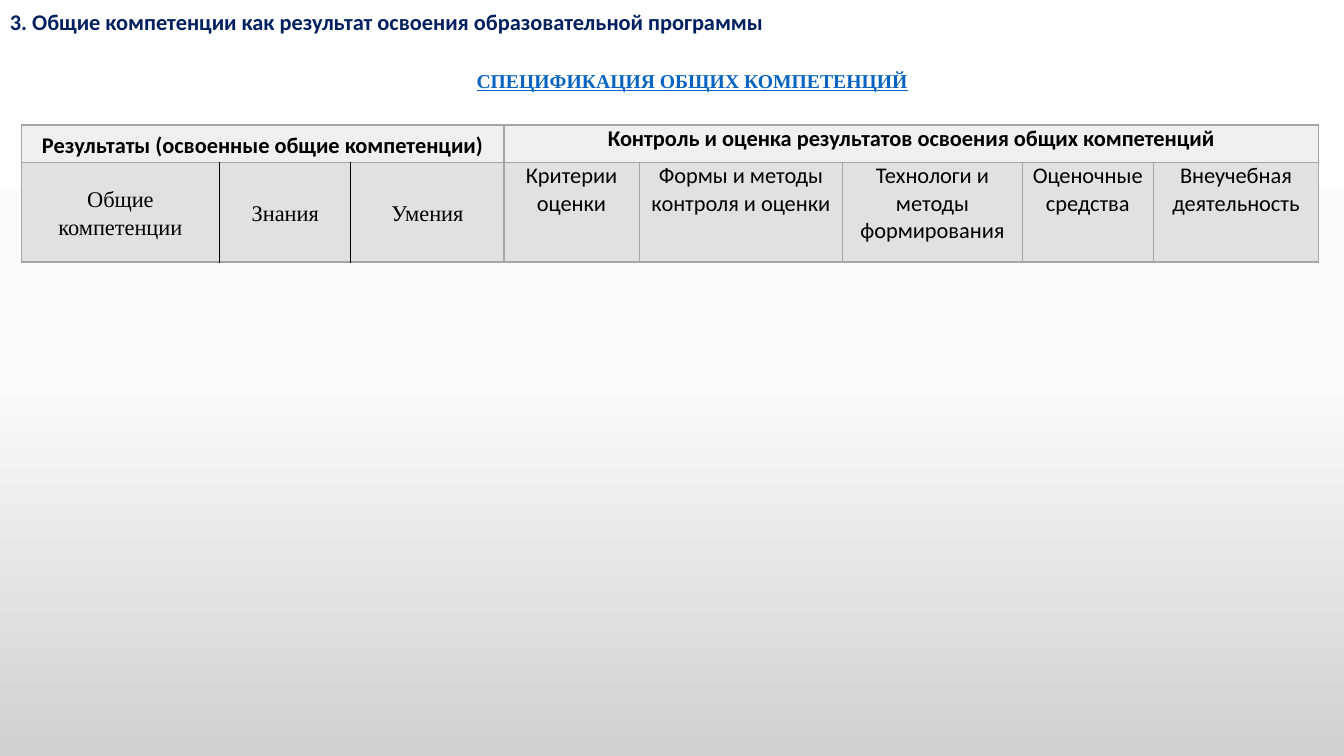
from lxml import etree
from pptx import Presentation
from pptx import util as u
from pptx.dml.color import RGBColor
from pptx.enum import text
from pptx.oxml import ns, parse_xml

TITLE = "3. Общие компетенции как результат освоения образовательной программы"
SUBTITLE = "СПЕЦИФИКАЦИЯ ОБЩИХ КОМПЕТЕНЦИЙ"
GROUPS = [
    ("Результаты (освоенные общие компетенции)",
     [("Общие компетенции", 1.97), ("Знания", 1.3), ("Умения", 1.52)]),
    ("Контроль и оценка результатов освоения общих компетенций",
     [("Критерии оценки", 1.34), ("Формы и методы контроля и оценки", 2.02),
      ("Технологи и методы формирования", 1.78), ("Оценочные средства", 1.3),
      ("Внеучебная деятельность", 1.64)]),
]
ROW_HEIGHTS = [0.37, 0.99]
THEME = {
    "sans": "Calibri", "serif": "Times New Roman",
    "body_size": 16, "subtitle_size": 14,
    "title": "002060", "link": "0563C1", "ink": "000000",
    "group_fill": "F0F0F0", "column_fill": "E1E1E1", "border": "A5A5A5",
    "background": [(0, "FFFFFF"), (50, "FBFBFB"), (100, "D1D1D1")],
}


def style(para, font, size, color, bold=False, underline=None):
    para.font.name = font
    para.font.size = u.Pt(size)
    para.font.color.rgb = RGBColor.from_string(color)
    para.font.bold = bold
    para.font.underline = underline


def paint_background(page):
    fill = page.background.fill
    fill.gradient()
    fill.gradient_angle = 270
    stops = fill._fill._gradFill.find(ns.qn("a:gsLst"))
    for stop in list(stops):
        stops.remove(stop)
    for percent, color in THEME["background"]:
        stop = etree.SubElement(stops, ns.qn("a:gs"), pos=str(percent * 1000))
        etree.SubElement(stop, ns.qn("a:srgbClr"), val=color)


def add_text(page, words, left, top, width, height, wrap):
    box = page.shapes.add_textbox(*map(u.Inches, (left, top, width, height)))
    frame = box.text_frame
    frame.word_wrap = wrap
    frame.auto_size = text.MSO_AUTO_SIZE.SHAPE_TO_FIT_TEXT
    frame.text = words
    return frame


def set_borders(cell, left, right):
    sides = {"L": left, "R": right, "T": THEME["border"], "B": THEME["border"]}
    properties = cell._tc.get_or_add_tcPr()
    for place, (side, color) in enumerate(sides.items()):
        properties.insert(place, parse_xml(
            f'<a:ln{side} {ns.nsdecls("a")} w="12700"><a:solidFill>'
            f'<a:srgbClr val="{color}"/></a:solidFill></a:ln{side}>'))


def fill_cell(cell, words, fill, font, bold, middle):
    cell.fill.solid()
    cell.fill.fore_color.rgb = RGBColor.from_string(fill)
    cell.margin_left = cell.margin_right = u.Inches(0.07)
    cell.margin_top = cell.margin_bottom = 0
    cell.text = words
    para = cell.text_frame.paragraphs[0]
    para.alignment = text.PP_ALIGN.CENTER
    style(para, font, THEME["body_size"], THEME["ink"], bold)
    if middle:
        cell.vertical_anchor = text.MSO_ANCHOR.MIDDLE
        para.line_spacing = 1.15


def add_competence_table(page):
    widths = [width for _, columns in GROUPS for _, width in columns]
    table = page.shapes.add_table(
        len(ROW_HEIGHTS), len(widths), u.Inches(0.21), u.Inches(1.24),
        u.Inches(sum(widths)), u.Inches(sum(ROW_HEIGHTS))).table
    table.first_row = table.horz_banding = False
    for column, width in zip(table.columns, widths):
        column.width = u.Inches(width)
    for row, height in zip(table.rows, ROW_HEIGHTS):
        row.height = u.Inches(height)

    start = 0
    for group, (heading, columns) in enumerate(GROUPS):
        results = group == 0
        last = len(columns) - 1
        table.cell(0, start).merge(table.cell(0, start + last))
        fill_cell(table.cell(0, start), heading, THEME["group_fill"],
                  THEME["sans"], True, results)
        inner = THEME["ink"] if results else THEME["border"]
        for index, (label, _) in enumerate(columns):
            set_borders(table.cell(0, start + index), THEME["border"], THEME["border"])
            cell = table.cell(1, start + index)
            fill_cell(cell, label, THEME["column_fill"],
                      THEME["serif"] if results else THEME["sans"], False, results)
            set_borders(cell, inner if index > 0 else THEME["border"],
                        inner if index < last else THEME["border"])
        start += len(columns)


def main():
    deck = Presentation()
    deck.slide_width, deck.slide_height = u.Inches(13.33), u.Inches(7.5)
    page = deck.slides.add_slide(deck.slide_layouts[6])
    paint_background(page)

    title = add_text(page, TITLE, 0, 0.03, 13.13, 0.37, True)
    style(title.paragraphs[0], THEME["sans"], THEME["body_size"], THEME["title"], True)

    add_competence_table(page)

    subtitle = add_text(page, SUBTITLE, 4.61, 0.63, 4.51, 0.34, False)
    subtitle.vertical_anchor = text.MSO_ANCHOR.MIDDLE
    subtitle.paragraphs[0].alignment = text.PP_ALIGN.CENTER
    style(subtitle.paragraphs[0], THEME["serif"], THEME["subtitle_size"],
          THEME["link"], True, True)

    deck.save("out.pptx")


if __name__ == "__main__":
    main()
